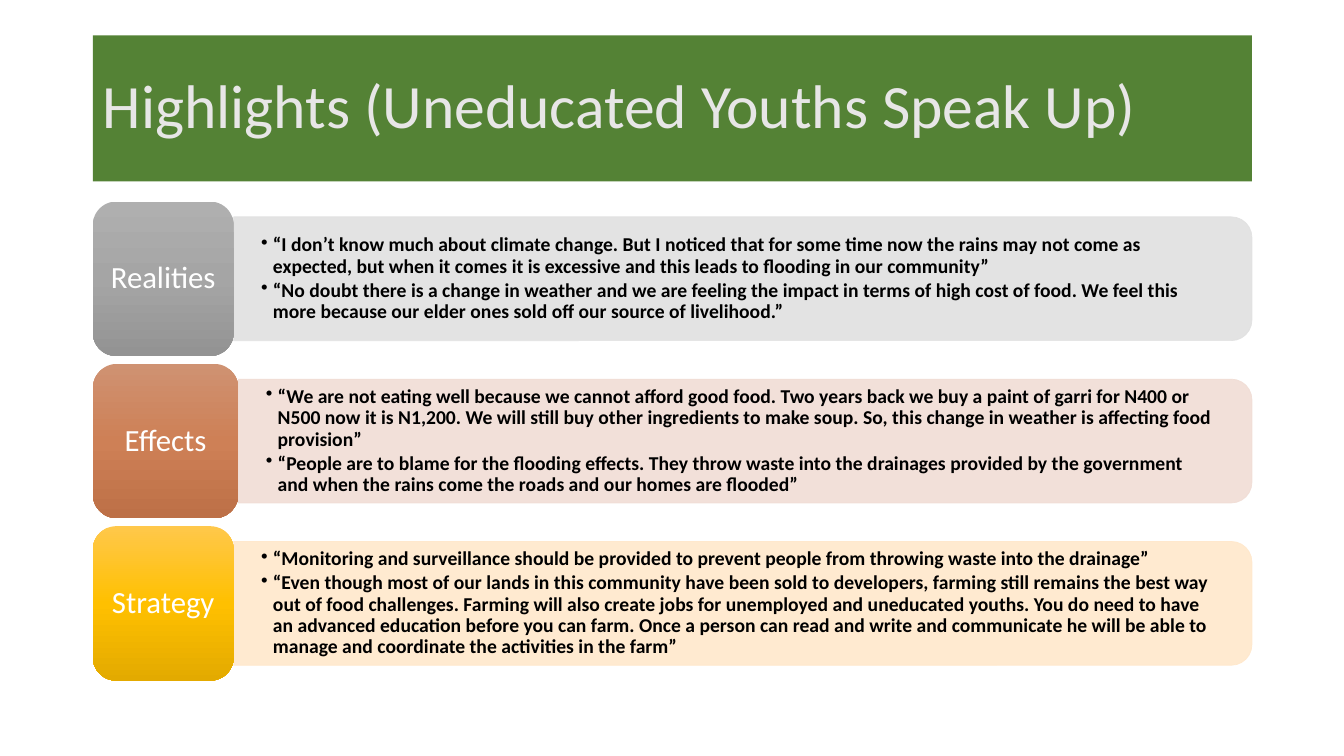
from copy import deepcopy
from dataclasses import dataclass

from lxml.etree import SubElement
from pptx import Presentation
from pptx.dml.color import RGBColor
from pptx.enum.shapes import MSO_SHAPE
from pptx.enum.text import MSO_ANCHOR, PP_ALIGN
from pptx.oxml.ns import qn
from pptx.shapes.autoshape import Shape
from pptx.slide import Slide
from pptx.text.text import TextFrame
from pptx.util import Cm, Pt


@dataclass(frozen=True)
class Theme:
    font: str = "Calibri"
    title_size: int = 44
    label_size: int = 22
    quote_size: int = 14
    banner: str = "548235"
    title: str = "E7E6E6"
    label: str = "FFFFFF"
    quote: str = "000000"


@dataclass(frozen=True)
class Topic:
    label: str
    tab_width: float
    gradient: tuple[str, str, str]
    panel: str
    quotes: tuple[str, ...]


THEME = Theme()
LEFT, RIGHT = 2.34, 31.55
FIRST_TOP, PITCH = 5.08, 4.09
TAB_HEIGHT, PANEL_HEIGHT, QUOTES_HEIGHT = 3.89, 3.12, 2.82

TOPICS = [
    Topic("Realities", 3.55, ("AFAFAF", "A5A5A5", "939393"), "E1E1E1", (
        "“I don’t know much about climate change. But I noticed that for some time now "
        "the rains may not come as expected, but when it comes it is excessive and this "
        "leads to flooding in our community”",
        "“No doubt there is a change in weather and we are feeling the impact in terms of "
        "high cost of food. We feel this more because our elder ones sold off our source "
        "of livelihood.”",
    )),
    Topic("Effects", 3.67, ("CF9272", "CE8056", "BD7047"), "F1DDD5", (
        "“We are not eating well because we cannot afford good food. Two years back we buy "
        "a paint of garri for N400 or N500 now it is N1,200. We will still buy other "
        "ingredients to make soup. So, this change in weather is affecting food provision”",
        "“People are to blame for the flooding effects. They throw waste into the drainages "
        "provided by the government and when the rains come the roads and our homes are "
        "flooded”",
    )),
    Topic("Strategy", 3.55, ("FFC84B", "FFC000", "E3AA00"), "FFE8CB", (
        "“Monitoring and surveillance should be provided to prevent people from throwing "
        "waste into the drainage”",
        "“Even though most of our lands in this community have been sold to developers, "
        "farming still remains the best way out of food challenges. Farming will also "
        "create jobs for unemployed and uneducated youths. You do need to have an advanced "
        "education before you can farm. Once a person can read and write and communicate "
        "he will be able to manage and coordinate the activities in the farm”",
    )),
]


def write(tf: TextFrame, texts: tuple[str, ...], *, size: int, color: str,
          bold: bool = False, align: PP_ALIGN = PP_ALIGN.LEFT, bullet: bool = False,
          inset: tuple[float, float] = (0.25, 0.13)) -> None:
    """Fill a frame with one paragraph per text; inset is (sides, top and bottom) in cm."""
    tf.word_wrap = True
    tf.vertical_anchor = MSO_ANCHOR.MIDDLE
    tf.margin_left = tf.margin_right = Cm(inset[0])
    tf.margin_top = tf.margin_bottom = Cm(inset[1])
    for i, text in enumerate(texts):
        p = tf.add_paragraph() if i else tf.paragraphs[0]
        p.alignment = align
        p.line_spacing = 0.9
        r = p.add_run()
        r.text = text
        r.font.name = THEME.font
        r.font.size = Pt(size)
        r.font.bold = bold
        r.font.color.rgb = RGBColor.from_string(color)
        if bullet:
            p.level = 1
            p.space_after = Pt(2)
            pPr = p._p.get_or_add_pPr()
            pPr.set("marL", str(Cm(0.3)))
            pPr.set("indent", str(-Cm(0.3)))
            SubElement(pPr, qn("a:buChar"), char="•")


def add_block(s: Slide, kind: MSO_SHAPE, left: float, top: float,
              width: float, height: float) -> Shape:
    sp = s.shapes.add_shape(kind, Cm(left), Cm(top), Cm(width), Cm(height))
    sp.shadow.inherit = False
    sp.line.fill.background()
    return sp


def fill_gradient(sp: Shape, colors: tuple[str, str, str]) -> None:
    """Shade the shape from top to bottom through three colours."""
    sp.fill.gradient()
    sp.fill.gradient_angle = 270
    stops = sp._element.spPr.find(qn("a:gradFill")).find(qn("a:gsLst"))
    stops.insert(1, deepcopy(stops[0]))
    for stop, position, color in zip(sp.fill.gradient_stops, (0, 0.5, 1), colors):
        stop.position = position
        stop.color.rgb = RGBColor.from_string(color)


def add_panel(s: Slide, left: float, middle: float, color: str) -> None:
    """Draw a bar rounded on its right end: an upright shape turned by 90 degrees."""
    length = RIGHT - left
    sp = add_block(s, MSO_SHAPE.ROUND_2_SAME_RECTANGLE, (left + RIGHT - PANEL_HEIGHT) / 2,
                   middle - length / 2, PANEL_HEIGHT, length)
    sp.rotation = 90
    sp.line.width = Pt(0.5)
    for fill in (sp.fill, sp.line.fill):
        fill.solid()
        fill.fore_color.rgb = RGBColor.from_string(color)
    for clr in sp._element.spPr.iter(qn("a:srgbClr")):
        SubElement(clr, qn("a:alpha"), val="90000")


def add_topic(s: Slide, topic: Topic, top: float) -> None:
    middle = top + TAB_HEIGHT / 2
    panel_left = LEFT + topic.tab_width
    add_panel(s, panel_left, middle, topic.panel)

    box = s.shapes.add_textbox(Cm(panel_left), Cm(middle - QUOTES_HEIGHT / 2),
                               Cm(RIGHT - panel_left - 0.15), Cm(QUOTES_HEIGHT))
    write(box.text_frame, topic.quotes, size=THEME.quote_size, color=THEME.quote,
          bold=True, bullet=True, inset=(0.69, 0.36))

    tab = add_block(s, MSO_SHAPE.ROUNDED_RECTANGLE, LEFT, top, topic.tab_width, TAB_HEIGHT)
    fill_gradient(tab, topic.gradient)
    write(tab.text_frame, (topic.label,), size=THEME.label_size, color=THEME.label,
          align=PP_ALIGN.CENTER)


def main() -> None:
    prs = Presentation()
    prs.slide_width, prs.slide_height = Cm(33.87), Cm(19.05)
    s = prs.slides.add_slide(prs.slide_layouts[6])

    for i, topic in enumerate(TOPICS):
        add_topic(s, topic, FIRST_TOP + i * PITCH)

    banner = add_block(s, MSO_SHAPE.RECTANGLE, LEFT, 0.89, RIGHT - LEFT, 3.68)
    banner.fill.solid()
    banner.fill.fore_color.rgb = RGBColor.from_string(THEME.banner)
    write(banner.text_frame, ("Highlights (Uneducated Youths Speak Up)",),
          size=THEME.title_size, color=THEME.title)

    prs.save("out.pptx")


if __name__ == "__main__":
    main()
